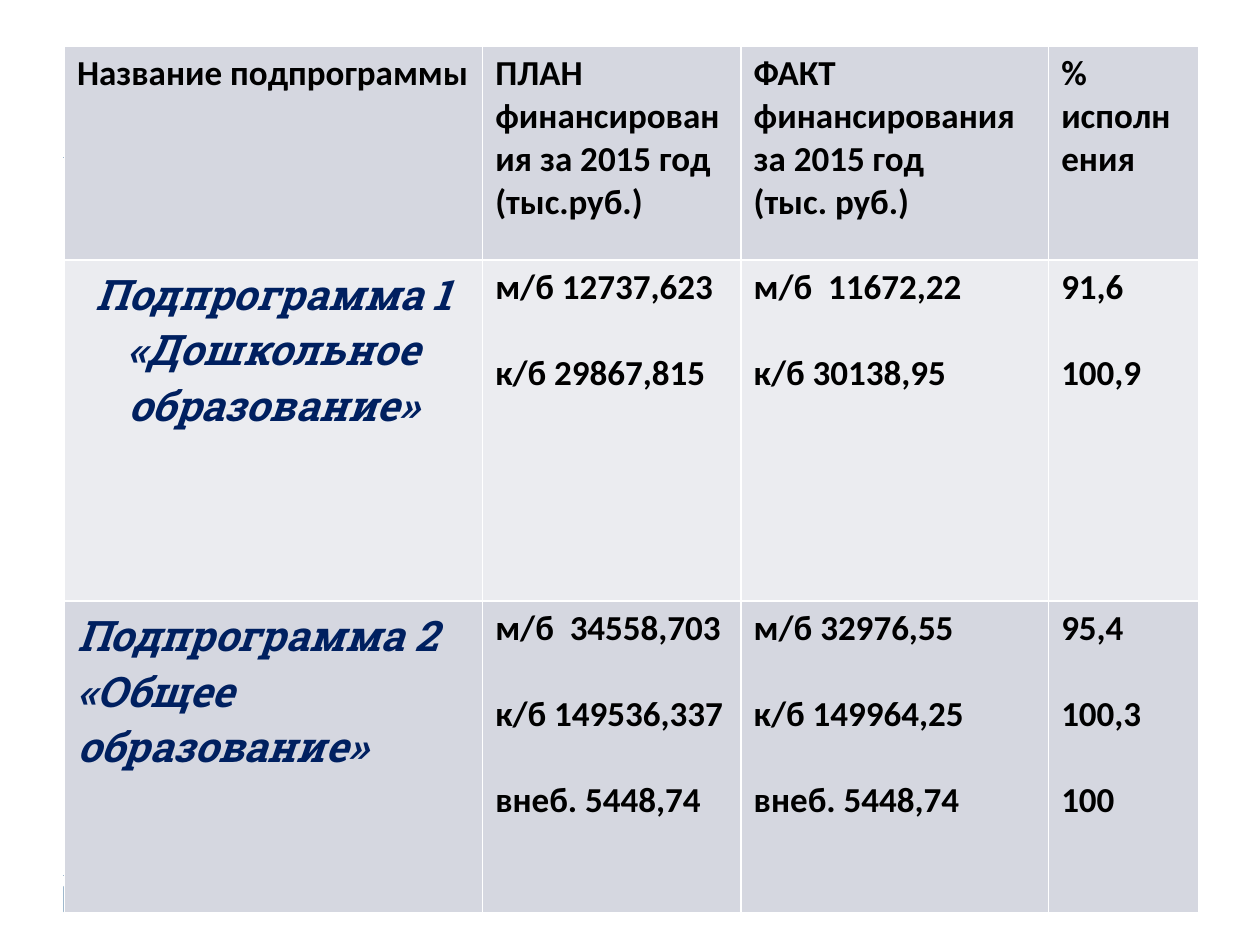
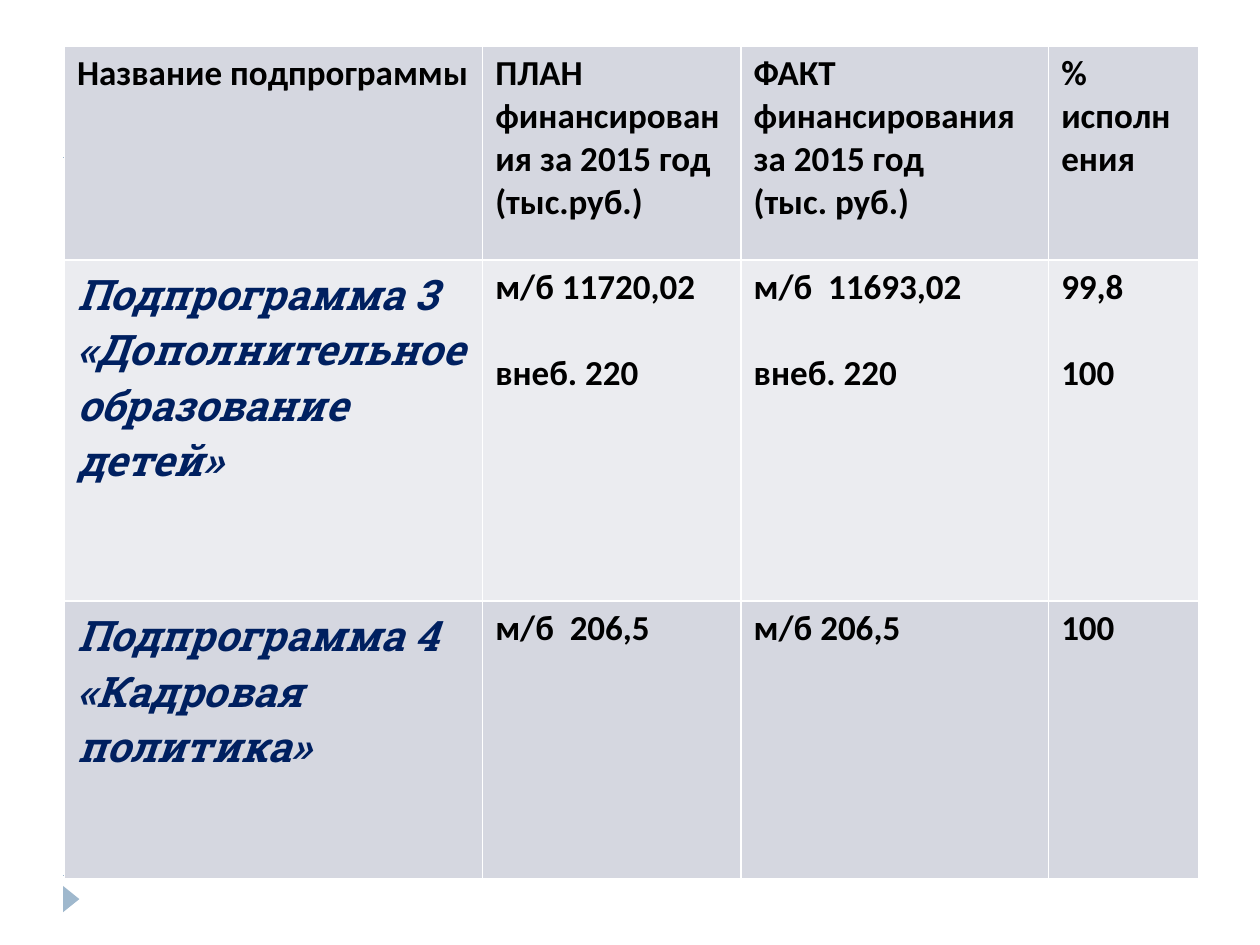
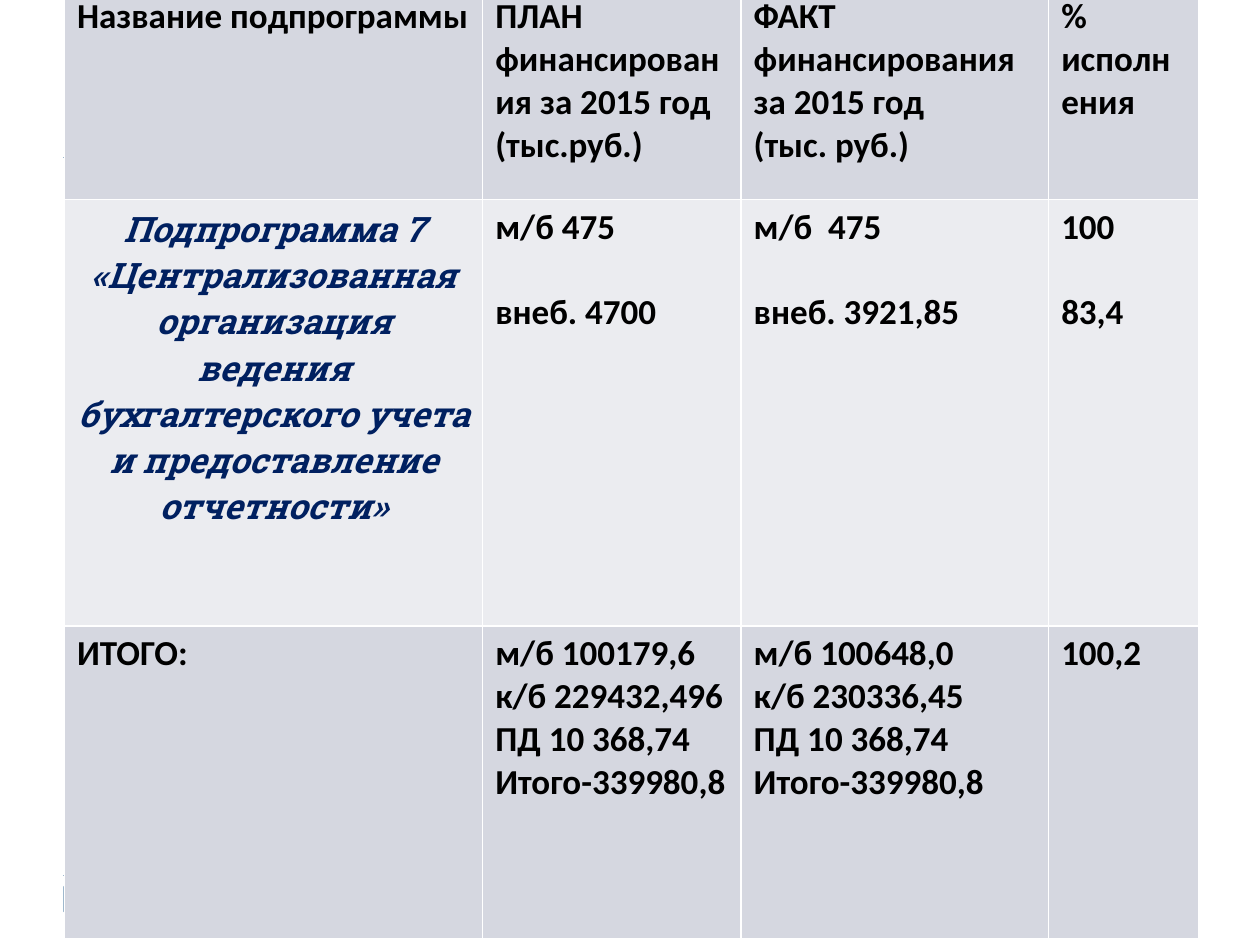
from dataclasses import dataclass

from lxml import etree
from pptx import Presentation
from pptx.dml.color import RGBColor
from pptx.enum.dml import MSO_LINE
from pptx.enum.shapes import MSO_CONNECTOR, MSO_SHAPE
from pptx.enum.text import PP_ALIGN
from pptx.oxml.ns import qn
from pptx.util import Cm, Pt

LEFT, CENTER = PP_ALIGN.LEFT, PP_ALIGN.CENTER
STRAIGHT = MSO_CONNECTOR.STRAIGHT
TRIANGLE = MSO_SHAPE.ISOSCELES_TRIANGLE
DASH = MSO_LINE.DASH


@dataclass(frozen=True)
class Theme:
    accent: str = "9FB8CD"
    text: str = "000000"
    program: str = "002060"
    border: str = "FFFFFF"
    bands: tuple = ("D5D7E0", "EBECF0")
    body_font: str = "Calibri"
    program_font: str = "Roboto Slab"
    body_size: int = 20
    program_size: int = 24
    amount_gap: float = 24.4
    rule_width: float = 0.75
    border_width: float = 1


@dataclass
class Program:
    """Name of a subprogram, as it stands in the first column."""
    name: str
    align: PP_ALIGN = LEFT
    size: int = Theme.program_size


@dataclass
class Amounts:
    """Lines of one cell, with or without a gap between them."""
    lines: tuple
    spaced: bool = True


def tight(*lines):
    return Amounts(lines, spaced=False)


def spaced(*lines):
    return Amounts(lines)


class DeckBuilder:
    def __init__(self, theme):
        self.theme = theme
        self.deck = Presentation()
        self.deck.slide_width, self.deck.slide_height = Cm(25.4), Cm(19.05)
        self.page = None

    def add_page(self):
        self.page = self.deck.slides.add_slide(self.deck.slide_layouts[6])
        for y in (17.65, 3.18):
            self.add_rule(y)
        self.add_marker()

    def add_rule(self, y):
        rule = self.page.shapes.add_connector(
            STRAIGHT, Cm(1.27), Cm(y), Cm(24.13), Cm(y))
        rule.line.color.rgb = RGBColor.from_string(self.theme.accent)
        rule.line.width = Pt(self.theme.rule_width)
        rule.line.dash_style = DASH
        etree.SubElement(rule._element.spPr, qn("a:effectLst"))

    def add_marker(self):
        marker = self.page.shapes.add_shape(
            TRIANGLE, Cm(1.17), Cm(17.96), Cm(0.53), Cm(0.33))
        marker.rotation = 90
        marker.shadow.inherit = False
        marker.fill.solid()
        marker.fill.fore_color.rgb = RGBColor.from_string(self.theme.accent)
        marker.line.fill.background()

    def add_table(self, top, widths, heights, rows):
        frame = self.page.shapes.add_table(
            len(rows), len(widths), Cm(1.3), Cm(top),
            Cm(sum(widths)), Cm(sum(heights)))
        table = frame.table
        table.first_row = table.horz_banding = False
        for column, width in zip(table.columns, widths):
            column.width = Cm(width)
        for index, (row, height) in enumerate(zip(rows, heights)):
            table.rows[index].height = Cm(height)
            band = self.theme.bands[index % 2]
            for cell, content in zip(table.rows[index].cells, row):
                self.style_cell(cell, band)
                self.fill_cell(cell, content)

    def style_cell(self, cell, band):
        properties = cell._tc.get_or_add_tcPr()
        for side in ("lnL", "lnR", "lnT", "lnB"):
            edge = etree.SubElement(properties, qn(f"a:{side}"),
                                    w=str(Pt(self.theme.border_width)))
            paint = etree.SubElement(edge, qn("a:solidFill"))
            etree.SubElement(paint, qn("a:srgbClr"), val=self.theme.border)
        cell.fill.solid()
        cell.fill.fore_color.rgb = RGBColor.from_string(band)

    def fill_cell(self, cell, content):
        frame = cell.text_frame
        frame.word_wrap = True
        if isinstance(content, Program):
            para = frame.paragraphs[0]
            para.alignment = content.align
            for index, line in enumerate(content.name.split("\n")):
                if index:
                    para.add_line_break()
                self.add_span(para, line, content.size, self.theme.program_font,
                              self.theme.program, italic=True)
            return
        for index, line in enumerate(content.lines):
            para = frame.add_paragraph() if index else frame.paragraphs[0]
            if index and content.spaced:
                para.space_before = Pt(self.theme.amount_gap)
            self.add_span(para, line, self.theme.body_size,
                          self.theme.body_font, self.theme.text)

    def add_span(self, para, text, size, font, color, italic=False):
        span = para.add_run()
        span.text = text
        span.font.size = Pt(size)
        span.font.name = font
        span.font.bold = True
        span.font.italic = italic
        span.font.color.rgb = RGBColor.from_string(color)


# Columns and heading row shared by all tables
COLUMN_WIDTHS = (8.43, 5.21, 6.2, 3.02)
HEADING = (
    tight("Название подпрограммы"),
    tight("ПЛАН финансирования за 2015 год", "(тыс.руб.)"),
    tight("ФАКТ финансирования за 2015 год", "(тыс. руб.)"),
    tight("% исполнения"),
)

# Each page: table top, row heights, rows below the heading
PAGES = (
    (0.93, (4.31, 6.88, 6.28), (
        (Program("Подпрограмма 1 «Дошкольное образование»", CENTER),
         spaced("м/б 12737,623", "к/б 29867,815"),
         spaced("м/б  11672,22", "к/б 30138,95"),
         spaced("91,6", "100,9")),
        (Program("Подпрограмма 2 «Общее образование»"),
         spaced("м/б  34558,703", "к/б 149536,337", "внеб. 5448,74"),
         spaced("м/б 32976,55", "к/б 149964,25", "внеб. 5448,74"),
         spaced("95,4", "100,3", "100")),
    )),
    (0.93, (4.31, 6.88, 5.59), (
        (Program("Подпрограмма 3 «Дополнительное образование детей»"),
         spaced("м/б 11720,02", "внеб. 220"),
         spaced("м/б  11693,02", "внеб. 220"),
         spaced("99,8", "100")),
        (Program("Подпрограмма 4\n«Кадровая политика»"),
         spaced("м/б  206,5"), spaced("м/б 206,5"), spaced("100")),
    )),
    (-0.22, (4.24, 8.6, 6.3), (
        (Program("Подпрограмма 7 «Централизованная организация ведения "
                 "бухгалтерского учета и предоставление отчетности»",
                 CENTER, Theme.body_size),
         spaced("м/б 475", "внеб. 4700"),
         spaced("м/б  475", "внеб. 3921,85"),
         spaced("100", "83,4")),
        (tight("ИТОГО:"),
         tight("м/б 100179,6", "к/б 229432,496", "ПД 10 368,74", "Итого-339980,8"),
         tight("м/б 100648,0", "к/б 230336,45", "ПД 10 368,74", "Итого-339980,8"),
         tight("100,2")),
    )),
)


def main():
    builder = DeckBuilder(Theme())
    for top, heights, rows in PAGES:
        builder.add_page()
        builder.add_table(top, COLUMN_WIDTHS, heights, (HEADING, *rows))
    builder.deck.save("out.pptx")


if __name__ == "__main__":
    main()
